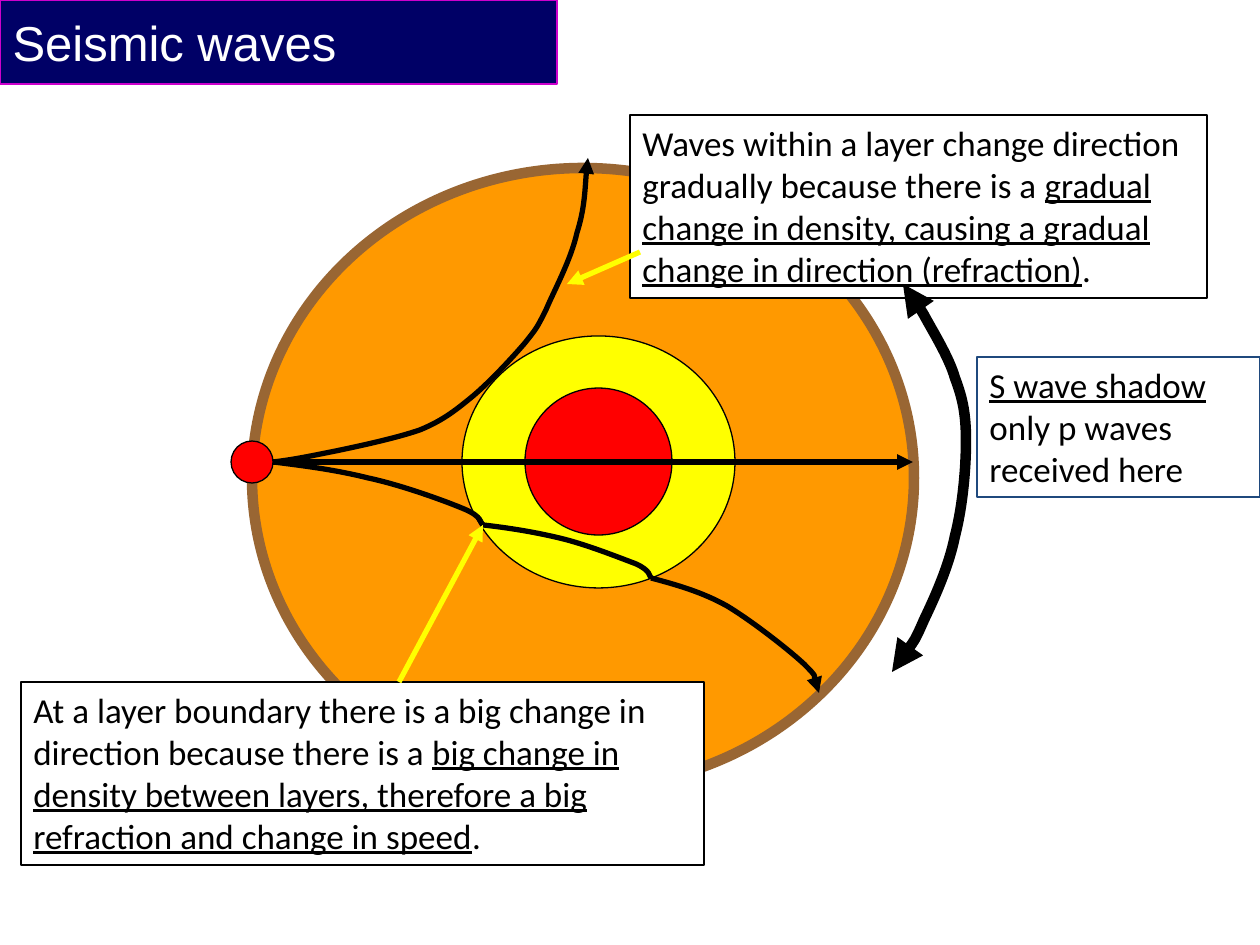
from lxml.etree import SubElement
from pptx import Presentation
from pptx.dml.color import RGBColor
from pptx.enum.shapes import MSO_CONNECTOR as Connector, MSO_SHAPE as Preset
from pptx.enum.text import MSO_ANCHOR as Anchor, MSO_AUTO_SIZE as AutoSize, PP_ALIGN as Align
from pptx.oxml.ns import qn
from pptx.util import Emu, Pt

SCALE = 914400 / 126
COLORS = {
    "navy": "000066", "magenta": "CC00CC", "white": "FFFFFF", "black": "000000",
    "orange": "FF9900", "brown": "996633", "yellow": "FFFF00", "red": "FF0000",
    "blue": "1F497D",
}
TITLE = ("Seismic waves", (0, 0, 557, 84))
LAYERS = [
    ((252, 168, 662, 620), "orange", "brown", 6),
    ((462, 336, 273, 252), "yellow", "black", 0.75),
    ((525, 388, 147, 147), "red", "black", 0.75),
    ((231, 441, 42, 42), "red", "black", 0.75),
]
RAY = ((273, 462), (913, 462))
WAVES = [
    ([(273, 462), (292, 460), (311, 456), (336, 451), (360, 446), (397, 438), (420, 430),
      (442, 421), (455, 411), (472, 397), (490, 382), (513, 357), (525, 343),
      (537, 328), (537, 328), (546, 310), (554, 291), (571, 260), (577, 233),
      (585, 208), (586, 170), (588, 158)], ["tailEnd"]),
    ([(273, 462), (305, 466), (336, 470), (368, 478), (401, 485), (445, 501), (464, 509),
      (483, 517), (480, 523), (483, 525)], []),
    ([(483, 525), (509, 528), (534, 532), (559, 538), (585, 544), (620, 558), (636, 564),
      (651, 571), (649, 576), (651, 578)], []),
    ([(651, 578), (677, 585), (702, 592), (727, 606), (752, 621), (789, 650), (804, 664),
      (819, 679), (816, 688), (819, 693)], ["tailEnd"]),
]
SHADOW_ZONE = [
    (892, 672), (903, 658), (914, 643), (924, 620), (935, 597), (949, 566), (955, 536),
    (963, 505), (966, 467), (966, 441), (966, 415), (963, 399), (955, 378),
    (949, 357), (932, 330), (924, 315), (915, 300), (906, 288), (903, 284),
]
NOTES = [
    ((630, 115, 577, 183), "black", [
        ("Waves within a layer change direction gradually because there is a ", False),
        ("gradual change in density, causing a gradual change in direction (refraction)", True),
        (".", False)]),
    ((21, 682, 683, 183), "black", [
        ("At a layer boundary there is a big change in direction because there is a ", False),
        ("big change in density between layers, therefore a big refraction and change in speed", True),
        (".", False)]),
    ((977, 357, 283, 140), "blue", [
        ("S wave shadow", True),
        (" only p waves received here", False)]),
]
POINTERS = [((399, 682), (483, 525)), ((640, 252), (567, 284))]


def px(*values):
    return [Emu(round(value * SCALE)) for value in values]


def rgb(name):
    return RGBColor.from_string(COLORS[name])


def set_line(shape, color, width):
    shape.line.color.rgb = rgb(color)
    shape.line.width = Pt(width)


def paint(shape, fill, line, width):
    shape.fill.solid()
    shape.fill.fore_color.rgb = rgb(fill)
    set_line(shape, line, width)


def add_heads(shape, ends):
    outline = shape.element.spPr.find(qn("a:ln"))
    for end in ends:
        SubElement(outline, qn(f"a:{end}"), type="triangle")


def add_span(para, text, **formats):
    span = para.add_run()
    span.text = text
    color = formats.pop("color")
    for name, value in formats.items():
        setattr(span.font, name, value)
    span.font.color.rgb = rgb(color)


def add_preset(page, preset, place, fill, line, width):
    shape = page.shapes.add_shape(preset, *px(*place))
    shape.shadow.inherit = False
    paint(shape, fill, line, width)
    return shape


def add_arrow(page, start, end, color):
    arrow = page.shapes.add_connector(Connector.STRAIGHT, *px(*start, *end))
    set_line(arrow, color, 3)
    add_heads(arrow, ["tailEnd"])
    SubElement(arrow.element.spPr, qn("a:effectLst"))


def add_curve(page, points, width, ends):
    builder = page.shapes.build_freeform(*points[0], scale=SCALE)
    builder.add_line_segments(points[1:], close=False)
    curve = builder.convert_to_shape()
    curve.shadow.inherit = False
    curve.fill.background()
    set_line(curve, "black", width)
    add_heads(curve, ends)
    outline = next(curve.element.iter(qn("a:path")))
    segments = outline.findall(qn("a:lnTo"))
    for first in range(0, len(segments), 3):
        bezier = SubElement(outline, qn("a:cubicBezTo"))
        for segment in segments[first:first + 3]:
            bezier.append(segment[0])
            outline.remove(segment)


def add_note(page, place, line, spans):
    box = add_preset(page, Preset.RECTANGLE, place, "white", line, 0.75)
    frame = box.text_frame
    frame.word_wrap = True
    frame.auto_size = AutoSize.SHAPE_TO_FIT_TEXT
    frame.vertical_anchor = Anchor.TOP
    para = frame.paragraphs[0]
    para.alignment = Align.LEFT
    for text, underline in spans:
        add_span(para, text, name="Calibri", size=Pt(20), underline=underline, color="black")


def add_title(page, text, place):
    title = page.shapes.title
    title.left, title.top, title.width, title.height = px(*place)
    paint(title, "navy", "magenta", 0.75)
    frame = title.text_frame
    frame.auto_size = AutoSize.NONE
    frame.vertical_anchor = Anchor.MIDDLE
    para = frame.paragraphs[0]
    para.alignment = Align.LEFT
    add_span(para, text, name="Arial", size=Pt(28), color="white")


def main():
    deck = Presentation()
    deck.slide_width, deck.slide_height = px(1260, 945)
    page = deck.slides.add_slide(deck.slide_layouts[5])
    add_title(page, *TITLE)
    for layer in LAYERS:
        add_preset(page, Preset.OVAL, *layer)
    add_arrow(page, *RAY, "black")
    for points, ends in WAVES:
        add_curve(page, points, 3, ends)
    for note in NOTES:
        add_note(page, *note)
    for start, end in POINTERS:
        add_arrow(page, start, end, "yellow")
    add_curve(page, SHADOW_ZONE, 6, ["headEnd", "tailEnd"])
    deck.save("out.pptx")


if __name__ == "__main__":
    main()
